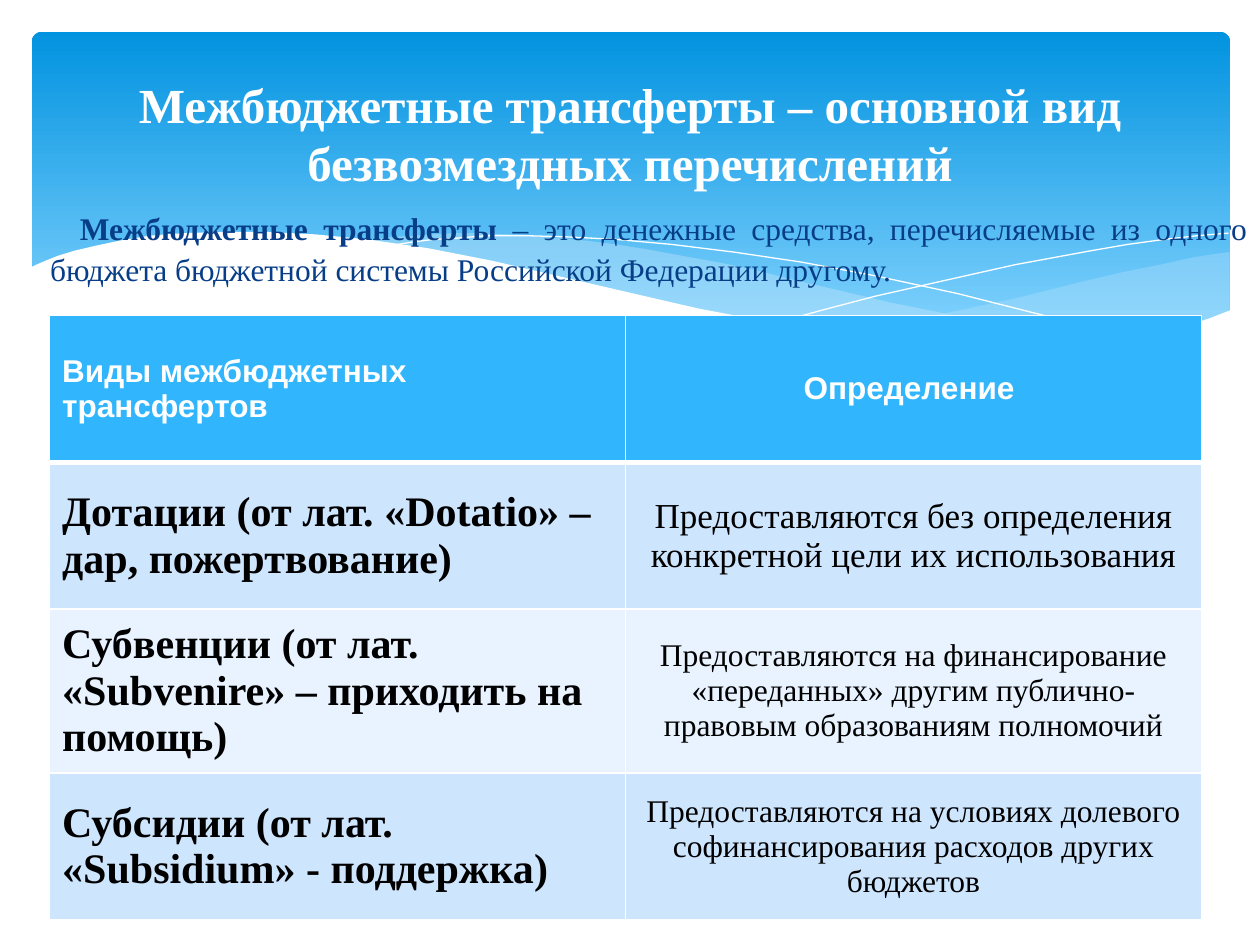
"""Build a slide that defines the kinds of interbudget transfers."""
from lxml import etree
from pptx import Presentation
from pptx.dml.color import RGBColor
from pptx.enum.shapes import MSO_SHAPE
from pptx.enum.text import MSO_ANCHOR, PP_ALIGN
from pptx.oxml import parse_xml
from pptx.oxml.ns import nsdecls, qn
from pptx.util import Cm, Pt

ROUNDED = MSO_SHAPE.ROUNDED_RECTANGLE
MIDDLE, TOP = MSO_ANCHOR.MIDDLE, MSO_ANCHOR.TOP
LEFT, CENTER, JUSTIFY = PP_ALIGN.LEFT, PP_ALIGN.CENTER, PP_ALIGN.JUSTIFY

WHITE = RGBColor(0xFF, 0xFF, 0xFF)
BLACK = RGBColor(0x00, 0x00, 0x00)
NAVY = RGBColor(0x07, 0x3E, 0x87)
SKY_DARK = RGBColor(0x02, 0x93, 0xE0)
SKY_LIGHT = RGBColor(0x83, 0xD3, 0xFE)
WAVE = RGBColor(0xC6, 0xE7, 0xFC)
HEADER = RGBColor(0x31, 0xB6, 0xFD)
BAND_DARK = RGBColor(0xCE, 0xE5, 0xFE)
BAND_LIGHT = RGBColor(0xE8, 0xF3, 0xFF)

SERIF, SANS = "Times New Roman", "Arial"
POINT_SCALE = Cm(2.54) / 100

RIGHT_WAVE = [
    (975, 200), (948, 204), (921, 210), (891, 216), (861, 223), (805, 237),
    (753, 248), (706, 257), (661, 265), (691, 269), (719, 272), (745, 275),
    (769, 277), (803, 278), (835, 277), (863, 275), (889, 272), (913, 267),
    (935, 262), (949, 257), (963, 252), (976, 247), (976, 200)]
LONG_WAVE = [
    (893, 273), (866, 269), (837, 265), (807, 260), (775, 254), (741, 247),
    (706, 240), (668, 231), (629, 222), (598, 214), (569, 208), (541, 203),
    (514, 198), (489, 194), (465, 191), (442, 189), (420, 187), (399, 186),
    (380, 185), (361, 185), (344, 186), (313, 188), (286, 191), (323, 196),
    (362, 203), (404, 211), (449, 222), (491, 232), (530, 240), (566, 248),
    (601, 255), (634, 261), (665, 266), (695, 270), (722, 274), (748, 276),
    (773, 277), (807, 278), (838, 278), (867, 276), (893, 273)]
FALLING_LINE = [
    (309, 195), (328, 192), (344, 190), (363, 189), (387, 187), (416, 187),
    (450, 188), (489, 190), (533, 194), (582, 200), (636, 208), (695, 219),
    (760, 233), (831, 251), (907, 272)]
RISING_LINE = [
    (613, 257), (653, 246), (695, 235), (748, 223), (806, 210), (866, 199),
    (895, 194), (924, 190), (951, 187), (975, 185)]
WHITE_WAVE = [
    (977, 246), (959, 253), (940, 259), (920, 265), (899, 269), (875, 273),
    (850, 275), (823, 277), (793, 276), (761, 275), (726, 272), (688, 268),
    (648, 262), (603, 254), (555, 245), (503, 233), (447, 220), (391, 207),
    (340, 197), (292, 190), (250, 186), (211, 184), (177, 184), (146, 185),
    (119, 187), (95, 191), (76, 195), (59, 199), (46, 203), (36, 207),
    (29, 210), (23, 213), (23, 329), (977, 329)]

ROWS = [
    (("Виды межбюджетных трансфертов", 18), ("Определение ", 18)),
    (("Дотации (от лат. «Dotatio» – дар, пожертвование)", 24),
     ("Предоставляются без определения конкретной цели их использования", 20)),
    (("Субвенции (от лат. «Subvenire» – приходить на помощь)", 24),
     ("Предоставляются на финансирование «переданных» другим "
      "публично-правовым образованиям полномочий", 18)),
    (("Субсидии (от лат. «Subsidium» - поддержка)", 24),
     ("Предоставляются на условиях долевого софинансирования расходов "
      "других бюджетов", 18)),
]
ROW_FILLS = [HEADER, BAND_DARK, BAND_LIGHT, BAND_DARK]
ROW_HEIGHTS = [Cm(2.96), Cm(2.96), Cm(3.3), Cm(2.96)]


def add_span(para, text, size, color, bold=False, font=SERIF):
    """Append formatted text to a paragraph."""
    span = para.add_run()
    span.text = text
    span.font.size = Pt(size)
    span.font.name = font
    span.font.bold = bold
    span.font.color.rgb = color


def add_text(page, left, top, width, height, align, anchor=TOP):
    """Add a wrapping text box and return its first paragraph."""
    box = page.shapes.add_textbox(left, top, width, height)
    box.text_frame.word_wrap = True
    box.text_frame.vertical_anchor = anchor
    para = box.text_frame.paragraphs[0]
    para.alignment = align
    return para


def add_panel(page):
    """Add the rounded panel with its vertical gradient."""
    panel = page.shapes.add_shape(ROUNDED, Cm(0.64), Cm(0.64), Cm(24.16), Cm(6.86))
    panel.adjustments[0] = 0.03
    panel.shadow.inherit = False
    panel.line.fill.background()
    panel.fill.gradient()
    panel.fill.gradient_angle = 270
    for stop, color, position in zip(
            panel.fill.gradient_stops, (SKY_DARK, SKY_LIGHT), (0, 0.9)):
        stop.color.rgb = color
        stop.position = position


def add_curve(page, points, fill=None, opacity=100):
    """Draw a filled wave, or a white hairline when no fill is given."""
    builder = page.shapes.build_freeform(*points[0], scale=POINT_SCALE)
    builder.add_line_segments(points[1:], close=fill is not None)
    curve = builder.convert_to_shape()
    curve.shadow.inherit = False
    if fill is None:
        curve.fill.background()
        curve.line.color.rgb = WHITE
        curve.line.width = Pt(0)
        return
    curve.line.fill.background()
    curve.fill.solid()
    curve.fill.fore_color.rgb = fill
    if opacity < 100:
        color = curve._element.spPr.find(qn("a:solidFill"))[0]
        etree.SubElement(color, qn("a:alpha"), val=str(opacity * 1000))


def set_borders(cell, top, bottom):
    """Give a cell white borders with the given top and bottom widths."""
    properties = cell._tc.get_or_add_tcPr()
    for side, width in (("L", 1), ("R", 1), ("T", top), ("B", bottom)):
        properties.append(parse_xml(
            f'<a:ln{side} {nsdecls("a")} w="{Pt(width)}"><a:solidFill>'
            f'<a:srgbClr val="{WHITE}"/></a:solidFill></a:ln{side}>'))


def add_transfer_table(page):
    """Add the table of transfer kinds and their definitions."""
    table = page.shapes.add_table(
        len(ROWS), 2, Cm(1), Cm(6.36), Cm(23.22), sum(ROW_HEIGHTS)).table
    for row_index, (texts, fill) in enumerate(zip(ROWS, ROW_FILLS)):
        table.rows[row_index].height = ROW_HEIGHTS[row_index]
        is_header = row_index == 0
        for column, (text, size) in enumerate(texts):
            cell = table.cell(row_index, column)
            set_borders(cell, 3 if row_index == 1 else 1, 3 if is_header else 1)
            cell.fill.solid()
            cell.fill.fore_color.rgb = fill
            cell.vertical_anchor = MIDDLE
            para = cell.text_frame.paragraphs[0]
            para.alignment = CENTER if column else LEFT
            add_span(para, text, size, WHITE if is_header else BLACK,
                     bold=is_header or column == 0,
                     font=SANS if is_header else SERIF)


def add_definition(page):
    """Add the justified definition under the title."""
    para = add_text(page, Cm(0), Cm(4.01), Cm(25.4), Cm(2.3), JUSTIFY)
    para.space_before = Pt(6)
    para.line_spacing = 1.1
    properties = para._p.get_or_add_pPr()
    properties.set("marL", str(Cm(0.76)))
    properties.set("indent", str(Cm(0.6)))
    add_span(para, "Межбюджетные трансферты ", 18, NAVY, bold=True)
    add_span(para, "– это денежные средства, перечисляемые из одного бюджета "
             "бюджетной системы Российской Федерации другому.", 18, NAVY)


def main():
    """Assemble and save the slide."""
    deck = Presentation()
    deck.slide_width, deck.slide_height = Cm(25.4), Cm(19.05)
    page = deck.slides.add_slide(deck.slide_layouts[6])
    add_panel(page)
    add_curve(page, RIGHT_WAVE, WAVE, 29)
    add_curve(page, LONG_WAVE, WAVE, 40)
    add_curve(page, FALLING_LINE)
    add_curve(page, RISING_LINE)
    add_curve(page, WHITE_WAVE, WHITE)
    add_definition(page)
    title = add_text(page, Cm(1.27), Cm(0.94), Cm(22.86), Cm(3.48), CENTER, MIDDLE)
    add_span(title, "Межбюджетные трансферты – основной вид безвозмездных "
             "перечислений", 28, WHITE, bold=True)
    add_transfer_table(page)
    deck.save("out.pptx")


if __name__ == "__main__":
    main()
